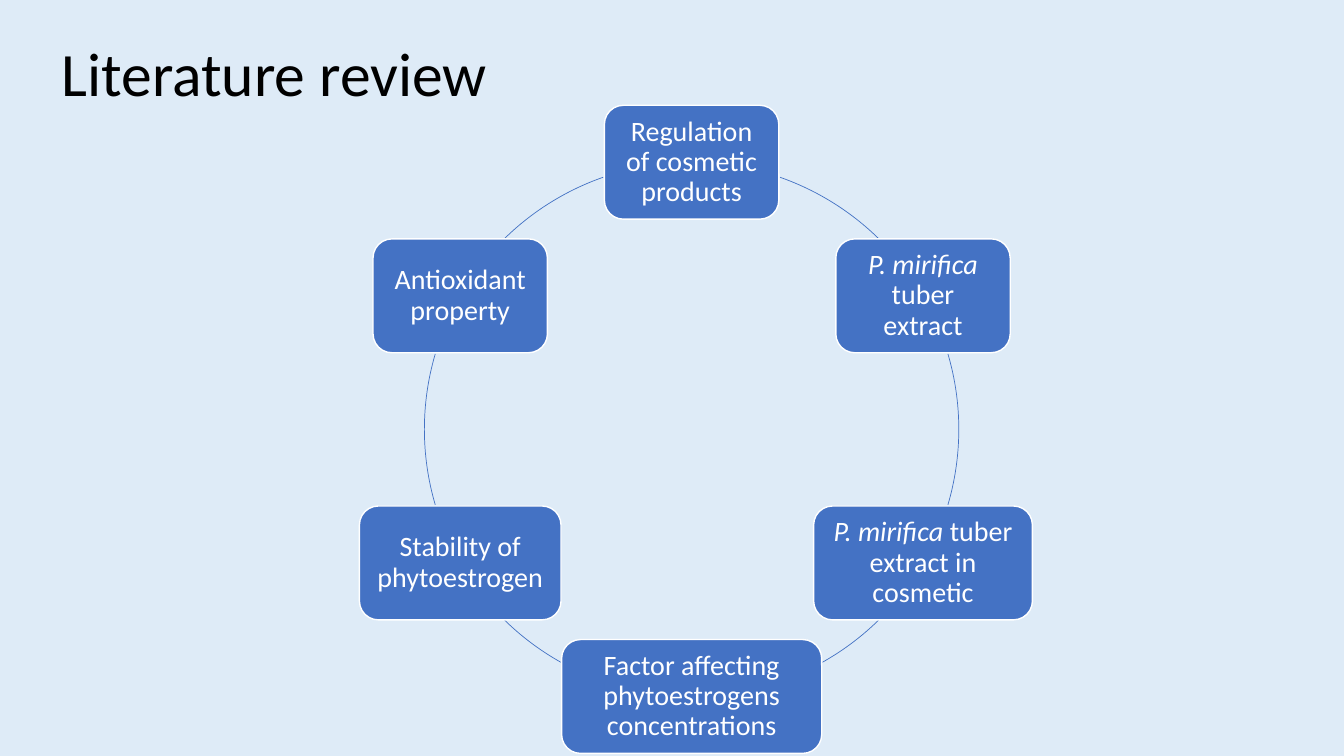
from math import cos, radians, sin

from pptx import Presentation
from pptx.dml.color import RGBColor
from pptx.enum.shapes import MSO_SHAPE
from pptx.enum.text import MSO_ANCHOR, MSO_AUTO_SIZE, PP_ALIGN
from pptx.util import Inches, Pt

ROUNDED = MSO_SHAPE.ROUNDED_RECTANGLE
ARC = MSO_SHAPE.ARC
MIDDLE = MSO_ANCHOR.MIDDLE
NO_AUTOSIZE = MSO_AUTO_SIZE.NONE
LEFT, CENTER = PP_ALIGN.LEFT, PP_ALIGN.CENTER

COLORS = {"background": "DEEBF7", "title": "000000", "topic": "4472C4", "white": "FFFFFF"}
FONT = "Calibri"
SLIDE_WIDTH, SLIDE_HEIGHT = 13.33, 7.5
TITLE_ONLY = 5
TOPIC_HEIGHT = 1.13
DEGREES_TO_ADJUSTMENT = 0.6  # 60000 units per degree, adjustments count in 100000

# Clockwise from the top: width, then (text, italic) runs
TOPICS = [
    (1.73, [("Regulation of cosmetic products", False)]),
    (1.73, [("P. mirifica", True), (" tuber extract", False)]),
    (2.17, [("P. mirifica ", True), ("tuber extract in cosmetic", False)]),
    (2.58, [("Factor affecting phytoestrogens concentrations", False)]),
    (2.0, [("Stability of phytoestrogen", False)]),
    (1.73, [("Antioxidant property", False)]),
]
# Visible stretches of the ring on its right half, in degrees clockwise from east
RIGHT_ARCS = [(-70.7, -45.7), (-16.4, 16.4), (45.6, 60.7)]


def color(name):
    return RGBColor.from_string(COLORS[name])


def format_paragraph(paragraph, size, color_name, alignment):
    paragraph.alignment = alignment
    paragraph.line_spacing = 0.9
    for run in paragraph.runs:
        run.font.name = FONT
        run.font.size = Pt(size)
        run.font.color.rgb = color(color_name)


def add_title(slide, box, text):
    title = slide.shapes.title
    title.left, title.top, title.width, title.height = map(Inches, box)
    frame = title.text_frame
    frame.text = text
    frame.vertical_anchor = MIDDLE
    frame.auto_size = NO_AUTOSIZE
    format_paragraph(frame.paragraphs[0], 44, "title", LEFT)


def add_arc(slide, box, start, end):
    arc = slide.shapes.add_shape(ARC, *map(Inches, box))
    arc.shadow.inherit = False
    arc.adjustments[0] = start % 360 * DEGREES_TO_ADJUSTMENT
    arc.adjustments[1] = end % 360 * DEGREES_TO_ADJUSTMENT
    arc.fill.background()
    arc.line.color.rgb = color("topic")
    arc.line.width = Pt(0.5)


def add_topic(slide, center_x, center_y, width, runs):
    box = (center_x - width / 2, center_y - TOPIC_HEIGHT / 2, width, TOPIC_HEIGHT)
    topic = slide.shapes.add_shape(ROUNDED, *map(Inches, box))
    topic.shadow.inherit = False
    topic.fill.solid()
    topic.fill.fore_color.rgb = color("topic")
    topic.line.color.rgb = color("white")
    topic.line.width = Pt(1)
    frame = topic.text_frame
    frame.word_wrap = True
    frame.vertical_anchor = MIDDLE
    frame.margin_left = frame.margin_right = Inches(0.08)
    frame.margin_top = frame.margin_bottom = Inches(0.08)
    paragraph = frame.paragraphs[0]
    for text, italic in runs:
        run = paragraph.add_run()
        run.text = text
        run.font.italic = italic
    format_paragraph(paragraph, 20, "white", CENTER)


def add_cycle(slide, box):
    left, top, diameter, _ = box
    radius = diameter / 2
    # Ring, mirrored from right to left
    for start, end in RIGHT_ARCS:
        add_arc(slide, box, start, end)
        add_arc(slide, box, 180 - end, 180 - start)
    # Topics at equal angles
    for index, (width, runs) in enumerate(TOPICS):
        angle = radians(index * 360 / len(TOPICS) - 90)
        center_x = left + radius * (1 + cos(angle))
        center_y = top + radius * (1 + sin(angle))
        add_topic(slide, center_x, center_y, width, runs)


def main():
    presentation = Presentation()
    presentation.slide_width = Inches(SLIDE_WIDTH)
    presentation.slide_height = Inches(SLIDE_HEIGHT)
    slide = presentation.slides.add_slide(presentation.slide_layouts[TITLE_ONLY])
    slide.background.fill.solid()
    slide.background.fill.fore_color.rgb = color("background")
    add_title(slide, (0.51, 0.03, 11.5, 1.45), "Literature review")
    add_cycle(slide, (4.21, 1.61, 5.3, 5.3))
    presentation.save("out.pptx")


if __name__ == "__main__":
    main()
